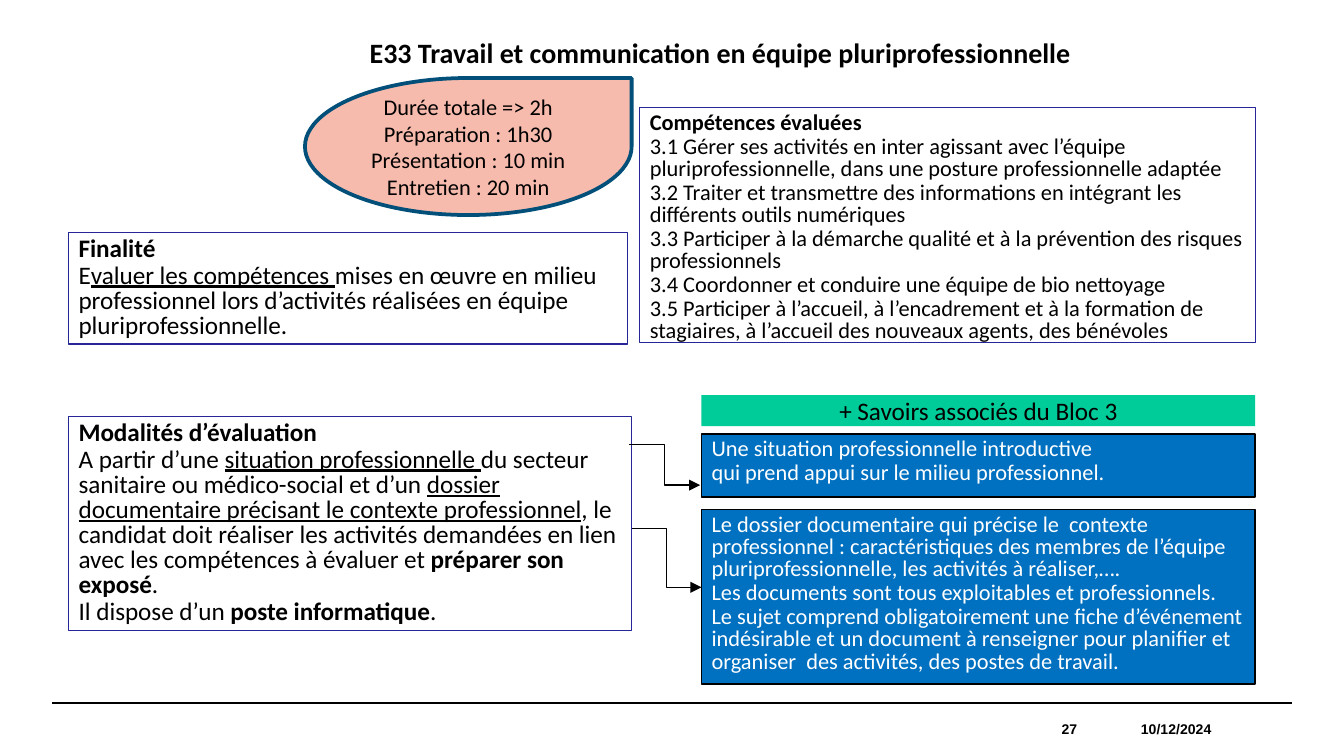
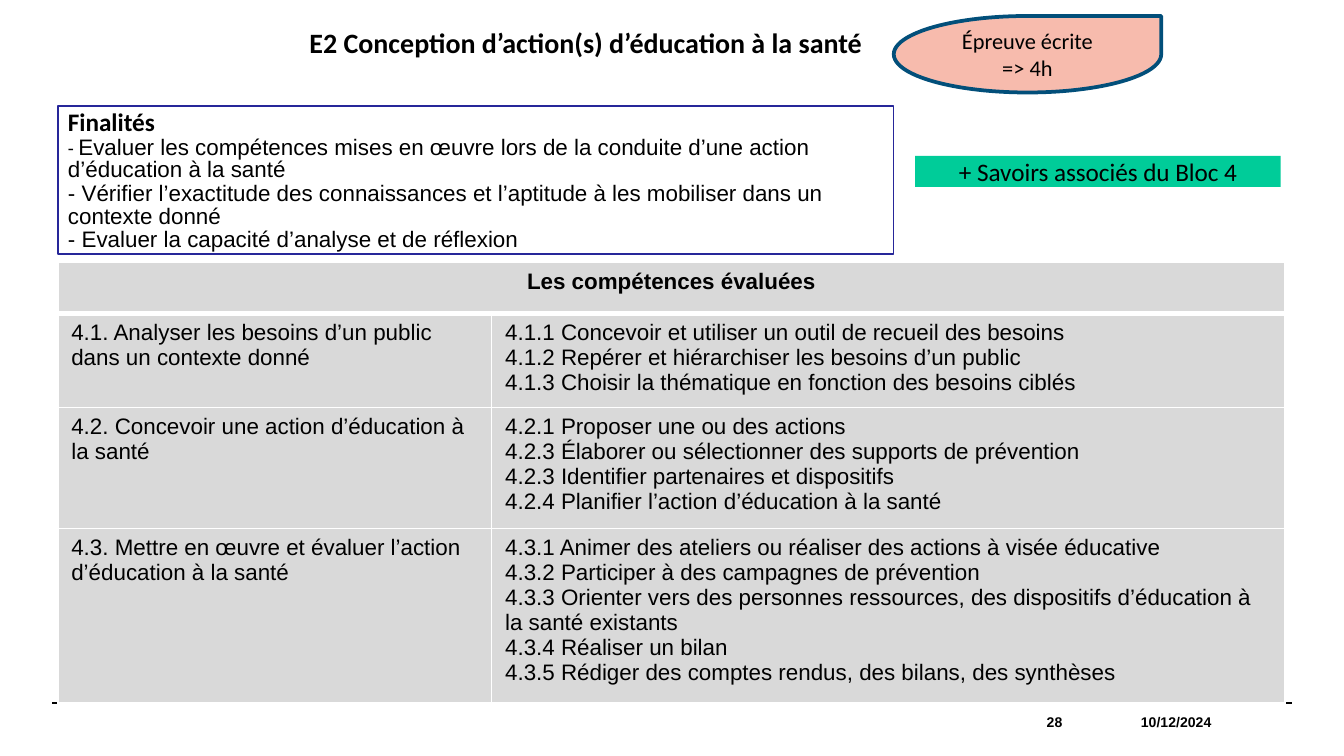
"""Build two slides describing the E33 and E2 examination units."""
from dataclasses import dataclass

from pptx import Presentation
from pptx.dml.color import RGBColor
from pptx.enum.shapes import MSO_CONNECTOR, MSO_SHAPE
from pptx.enum.text import MSO_ANCHOR, PP_ALIGN
from pptx.oxml.ns import qn
from pptx.util import Pt
from lxml import etree

RECT, TEAR = MSO_SHAPE.RECTANGLE, MSO_SHAPE.TEAR
STRAIGHT, ELBOW = MSO_CONNECTOR.STRAIGHT, MSO_CONNECTOR.ELBOW
LEFT, CENTER = PP_ALIGN.LEFT, PP_ALIGN.CENTER
TOP, MIDDLE = MSO_ANCHOR.TOP, MSO_ANCHOR.MIDDLE


@dataclass(frozen=True)
class Theme:
    black: str = "000000"
    white: str = "FFFFFF"
    frame: str = "262699"
    blue: str = "0070C0"
    green: str = "00CC99"
    salmon: str = "F7BBAD"
    navy: str = "024F7A"
    grey: str = "D9D9D9"
    head: str = "Calibri"
    body: str = "Arial"
    title: float = 15
    large: float = 13.5
    text: float = 12
    dash: float = 10.5
    foot: float = 7.5


T = Theme()
B, U = {"bold": True}, {"underline": True}
ARIAL = {"font": T.body, "size": T.text}
DATE = "10/12/2024"

TEAM = {
    "title": ("E33 Travail et communication en équipe pluriprofessionnelle",
              (176.4, 16.6, 419, 21.6)),
    "footer": ("27", 84, 28.1),
    "frames": [
        ((36.7, 124.6, 299.5, 59.8), T.large, [
            [("Finalité", B)],
            [("E", {}), ("valuer les compétences ", U),
             ("mises en œuvre en milieu professionnel lors d’activités réalisées "
              "en équipe pluriprofessionnelle.", {})],
        ]),
        ((342.7, 57.6, 329.8, 126), T.text, [
            [("Compétences évaluées", B)],
            "3.1 Gérer ses activités en inter agissant avec l’équipe "
            "pluriprofessionnelle, dans une posture professionnelle adaptée",
            "3.2 Traiter et transmettre des informations en intégrant les "
            "différents outils numériques",
            "3.3 Participer à la démarche qualité et à la prévention des "
            "risques professionnels",
            "3.4 Coordonner et conduire une équipe de bio nettoyage",
            "3.5 Participer à l’accueil, à l’encadrement et à la formation de "
            "stagiaires, à l’accueil des nouveaux agents, des bénévoles",
        ]),
        ((36.7, 223.2, 301.7, 114.5), T.large, [
            [("Modalités d’évaluation", B)],
            [("A partir d’une ", {}), ("situation professionnelle ", U),
             ("du secteur sanitaire ou médico-social et d’un ", {}),
             ("dossier documentaire précisant le contexte professionnel", U),
             (", le candidat doit réaliser les activités demandées en lien avec "
              "les compétences à évaluer et ", {}),
             ("préparer son exposé", B), (".", {})],
            [("Il dispose d’un ", {}), ("poste informatique", B), (".", {})],
        ]),
    ],
    "notes": [
        ((375.8, 232.6, 296.6, 33.8), [
            "Une situation professionnelle introductive",
            "qui prend appui sur le milieu professionnel.",
        ]),
        ((375.8, 272.9, 296.6, 93.6), [
            "Le dossier documentaire qui précise le  contexte professionnel : "
            "caractéristiques des membres de l’équipe pluriprofessionnelle, "
            "les activités à réaliser,….",
            "Les documents sont tous exploitables et professionnels.",
            "Le sujet comprend obligatoirement une fiche d’événement indésirable "
            "et un document à renseigner pour planifier et organiser  des "
            "activités, des postes de travail.",
        ]),
    ],
    "arrows": [(337, 238.3, 375.1, 259.9), (338.4, 283, 375.8, 314.6)],
    "band": ("+ Savoirs associés du Bloc 3", (375.8, 211.7, 296.6, 16.6)),
    "drop": (["Durée totale => 2h", "Préparation : 1h30",
              "Présentation : 10 min", "Entretien : 20 min"],
             (163.4, 41.8, 175, 73.4)),
}

HEALTH = {
    "title": ("E2 Conception d’action(s) d’éducation à la santé",
              (149, 10.8, 329.8, 23.8)),
    "footer": ("28", 76, 20.2),
    "frames": [
        ((31, 56.9, 447.8, 79.2), T.large, [
            [("Finalités", B)],
            [("- ", {"size": T.dash}),
             ("Evaluer les compétences mises en œuvre lors de la conduite d’une "
              "action d’éducation à la santé", ARIAL)],
            [("- Vérifier l’exactitude des connaissances et l’aptitude à les "
              "mobiliser dans un contexte donné", ARIAL)],
            [("- Evaluer la capacité d’analyse et de réflexion", ARIAL)],
        ]),
    ],
    "notes": [],
    "arrows": [],
    "band": ("+ Savoirs associés du Bloc 4", (490.3, 83.5, 195.8, 16.6)),
    "drop": (["Épreuve écrite", "=> 4h"], (478.8, 8.6, 143.3, 41)),
}

SKILLS_TITLE = "Les compétences évaluées"
SKILLS = [
    ("4.1. Analyser les besoins d’un public dans un contexte donné", [
        "4.1.1 Concevoir et utiliser un outil de recueil des besoins",
        "4.1.2 Repérer et hiérarchiser les besoins d’un public",
        "4.1.3 Choisir la thématique en fonction des besoins ciblés",
    ]),
    ("4.2. Concevoir une action d’éducation à la santé", [
        "4.2.1 Proposer une ou des actions",
        "4.2.3 Élaborer ou sélectionner des supports de prévention",
        "4.2.3 Identifier partenaires et dispositifs",
        "4.2.4 Planifier l’action d’éducation à la santé",
    ]),
    ("4.3. Mettre en œuvre et évaluer l’action d’éducation à la santé", [
        "4.3.1 Animer des ateliers ou réaliser des actions à visée éducative",
        "4.3.2 Participer à des campagnes de prévention",
        "4.3.3 Orienter vers des personnes ressources, des dispositifs "
        "d’éducation à la santé existants",
        "4.3.4 Réaliser un bilan",
        "4.3.5 Rédiger des comptes rendus, des bilans, des synthèses",
    ]),
]
SKILLS_AT = (31, 140.4)
SKILLS_COLS = (232.4, 425)
SKILLS_ROWS = (27.4, 49.8, 64.8, 93.2)


def rgb(value):
    return RGBColor.from_string(value)


def pts(values):
    return [Pt(v) for v in values]


def write(tf, paras, *, size=T.text, font=T.head, color=T.black, bold=False,
          align=LEFT, spacing=None, gap=0, tabs=()):
    for i, runs in enumerate(paras):
        p = tf.paragraphs[0] if i == 0 else tf.add_paragraph()
        if tabs:
            tab_list = etree.SubElement(p._p.get_or_add_pPr(), qn("a:tabLst"))
            for pos, kind in tabs:
                etree.SubElement(tab_list, qn("a:tab"), pos=str(Pt(pos)), algn=kind)
        p.alignment = align
        p.line_spacing = spacing
        p.space_before = Pt(gap if i else 0)
        p.space_after = Pt(gap)
        for text, style in [(runs, {})] if isinstance(runs, str) else runs:
            r = p.add_run()
            r.text = text
            r.font.name = style.get("font", font)
            r.font.size = Pt(style.get("size", size))
            r.font.bold = style.get("bold", bold)
            r.font.underline = style.get("underline", False)
            r.font.color.rgb = rgb(color)


def set_frame(tf, anchor=TOP, inset=(5.4, 2.7)):
    tf.word_wrap = True
    tf.vertical_anchor = anchor
    tf.margin_left = tf.margin_right = Pt(inset[0])
    tf.margin_top = tf.margin_bottom = Pt(inset[1])


def add_text(slide, box, paras, anchor=TOP, inset=(5.4, 2.7), **fmt):
    tf = slide.shapes.add_textbox(*pts(box)).text_frame
    set_frame(tf, anchor, inset)
    write(tf, paras, **fmt)


def add_box(slide, box, paras, kind=RECT, fill=None, line=None, width=0.75,
            anchor=TOP, **fmt):
    sp = slide.shapes.add_shape(kind, *pts(box))
    sp.shadow.inherit = False
    if fill:
        sp.fill.solid()
        sp.fill.fore_color.rgb = rgb(fill)
    else:
        sp.fill.background()
    if line:
        sp.line.color.rgb = rgb(line)
        sp.line.width = Pt(width)
    else:
        sp.line.fill.background()
    set_frame(sp.text_frame, anchor)
    write(sp.text_frame, paras, **fmt)


def add_line(slide, ends, kind=STRAIGHT, width=0.75, arrow=False):
    cx = slide.shapes.add_connector(kind, *pts(ends))
    cx.line.color.rgb = rgb(T.black)
    cx.line.width = Pt(width)
    if arrow:
        etree.SubElement(cx.line._get_or_add_ln(), qn("a:tailEnd"), type="triangle")
    etree.SubElement(cx._element.spPr, qn("a:effectLst"))


def style_cell(cell, paras, bottom=1, **fmt):
    tc_pr = cell._tc.get_or_add_tcPr()
    for side, width in (("L", 1), ("R", 1), ("T", 1), ("B", bottom)):
        ln = etree.SubElement(tc_pr, qn(f"a:ln{side}"), w=str(Pt(width)))
        fill = etree.SubElement(ln, qn("a:solidFill"))
        etree.SubElement(fill, qn("a:srgbClr"), val=T.white)
    cell.fill.solid()
    cell.fill.fore_color.rgb = rgb(T.grey)
    write(cell.text_frame, paras, font=T.body, **fmt)


def add_skills(slide):
    size = sum(SKILLS_COLS), sum(SKILLS_ROWS)
    table = slide.shapes.add_table(len(SKILLS_ROWS), len(SKILLS_COLS),
                                   *pts(SKILLS_AT + size)).table
    table.first_row = table.horz_banding = False
    for col, width in zip(table.columns, SKILLS_COLS):
        col.width = Pt(width)
    for row, height in zip(table.rows, SKILLS_ROWS):
        row.height = Pt(height)
    table.cell(0, 0).merge(table.cell(0, 1))
    style_cell(table.cell(0, 0), [SKILLS_TITLE], bottom=3, bold=True, align=CENTER)
    style_cell(table.cell(0, 1), [], bottom=3)
    for i, (skill, details) in enumerate(SKILLS, 1):
        style_cell(table.cell(i, 0), [skill])
        style_cell(table.cell(i, 1), details)


def add_unit(prs, unit):
    slide = prs.slides.add_slide(prs.slide_layouts[6])
    add_line(slide, (28, 376.6, 692, 376.6), width=0.8)
    title, box = unit["title"]
    add_text(slide, box, [title], size=T.title, bold=True, align=CENTER, gap=0.4)
    for box, size, paras in unit["frames"]:
        add_box(slide, box, paras, line=T.frame, size=size, spacing=0.83, gap=0.4)
    for box, paras in unit["notes"]:
        add_box(slide, box, paras, fill=T.blue, line=T.black, color=T.white,
                spacing=0.83, gap=0.4)
    for ends in unit["arrows"]:
        add_line(slide, ends, ELBOW, arrow=True)
    band, box = unit["band"]
    add_box(slide, box, [band], fill=T.green, anchor=MIDDLE, size=T.large,
            align=CENTER, gap=0.3)
    paras, box = unit["drop"]
    add_box(slide, box, paras, TEAR, T.salmon, T.navy, 2, MIDDLE, align=CENTER)
    number, number_end, height = unit["footer"]
    add_text(slide, (493.2, 376.6, 156.2, height), [f"\t{number}\t{DATE}"], MIDDLE,
             (0, 0), size=T.foot, font=T.body, bold=True,
             tabs=((number_end, "r"), (118, "l")))
    return slide


def main():
    prs = Presentation()
    prs.slide_width, prs.slide_height = Pt(720), Pt(405)
    add_unit(prs, TEAM)
    add_skills(add_unit(prs, HEALTH))
    prs.save("out.pptx")


if __name__ == "__main__":
    main()
